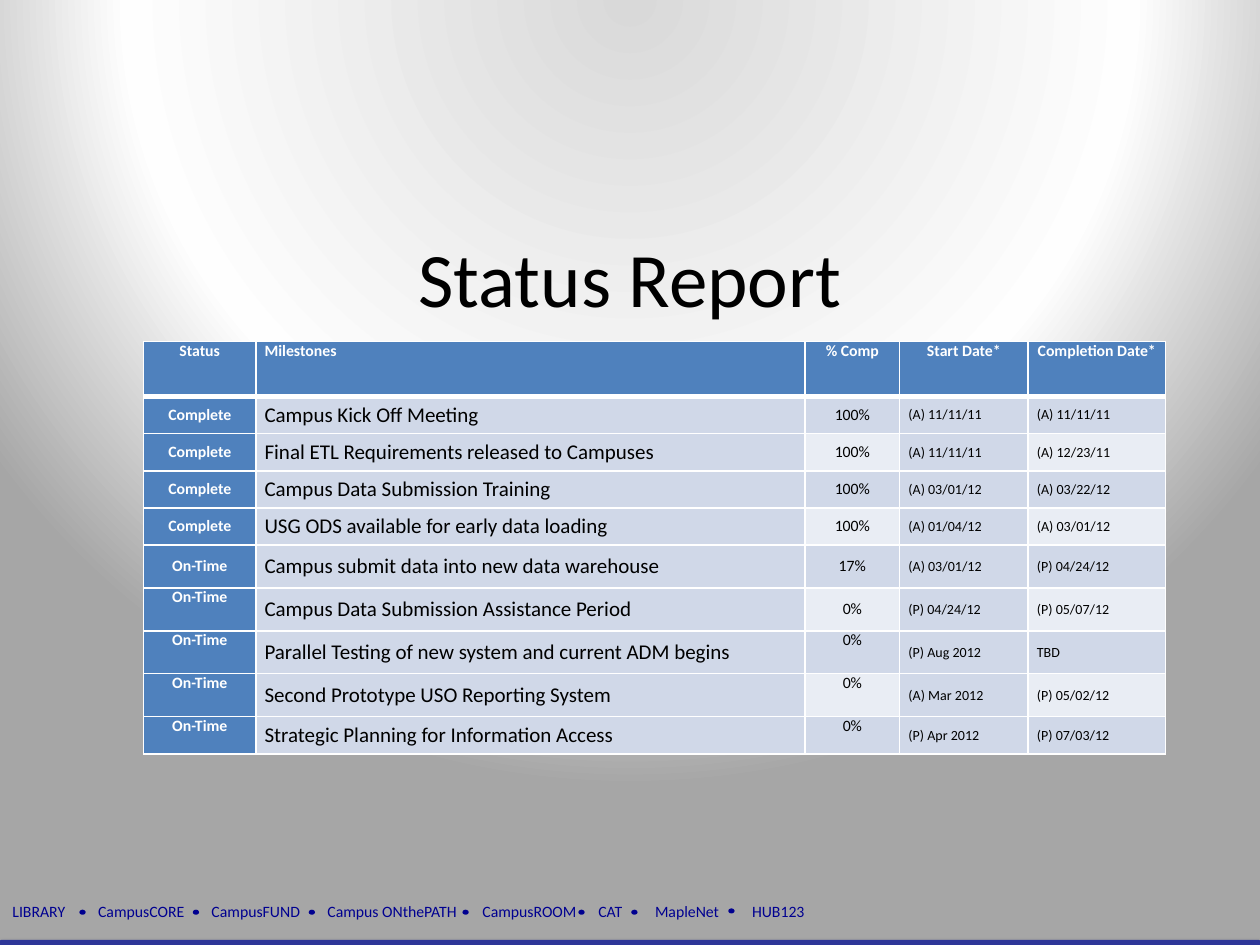
from lxml import etree
from pptx import Presentation
from pptx.dml.color import RGBColor
from pptx.enum.shapes import MSO_SHAPE as Shape
from pptx.enum.text import MSO_ANCHOR as Anchor, PP_ALIGN as Align
from pptx.oxml import parse_xml
from pptx.oxml.ns import nsdecls, qn
from pptx.util import Inches, Pt

FONT = "Calibri"
NAVY, WHITE, BLACK = "000090", "FFFFFF", "000000"
HEAD, BAND, PALE = "4F81BD", "D0D8E8", "E9EDF4"

COLUMNS = [0.89, 4.36, 0.75, 1.02, 1.09]  # inches
ALIGNS = [Align.CENTER, Align.LEFT, Align.CENTER, Align.LEFT, Align.LEFT]
SIZES = [9, 12, 9, 8, 8]
HEADINGS = ["Status", "Milestones", "% Comp", "Start Date*", "Completion Date*"]
MILESTONES = [
    ["Complete", "Campus Kick Off Meeting", "100%", "(A) 11/11/11", "(A) 11/11/11"],
    ["Complete", "Final ETL Requirements released to Campuses", "100%", "(A) 11/11/11", "(A) 12/23/11"],
    ["Complete", "Campus Data Submission Training", "100%", "(A) 03/01/12", "(A) 03/22/12"],
    ["Complete", "USG ODS available for early data loading", "100%", "(A) 01/04/12", "(A) 03/01/12"],
    ["On-Time", "Campus submit data into new data warehouse", "17%", "(A) 03/01/12", "(P) 04/24/12"],
    ["On-Time", "Campus Data Submission Assistance Period", "0%", "(P) 04/24/12", "(P) 05/07/12"],
    ["On-Time", "Parallel Testing of new system and current ADM begins", "0%", "(P) Aug 2012", "TBD"],
    ["On-Time", "Second Prototype USO Reporting System", "0%", "(A) Mar 2012", "(P) 05/02/12"],
    ["On-Time", "Strategic Planning for Information Access", "0%", "(P) Apr 2012", "(P) 07/03/12"],
]
ROW_HEIGHTS = [31.5] + [21.25] * 4 + [24.5] * 4 + [21.25]  # points
FIRST_TOP_ROW = {0: 6, 2: 7}  # column: first row whose text sits at the top

SERVICES = ["LIBRARY", "CampusCORE", "CampusFUND", "Campus ONthePATH",
            "CampusROOM", "CAT", "MapleNet", "HUB123"]
SERVICE_TABS = [0.68, 1.58, 2.5, 3.73, 4.65, 5.1, 5.87]
DOTS = [0.63, 1.53, 2.45, 3.67, 4.59, 5.01, 5.78]


def color(value):
    return RGBColor.from_string(value)


def style(para, size, tint, bold=False, align=Align.LEFT):
    para.alignment = align
    font = para.font
    font.name, font.size, font.bold = FONT, Pt(size), bold
    font.color.rgb = color(tint)


def set_background(page):
    page.background.fill.solid()
    holder = page.element.find(".//" + qn("p:bgPr"))
    stops = "".join(
        f'<a:gs pos="{share * 1000}"><a:srgbClr val="{tint}"/></a:gs>'
        for share, tint in [(0, "D9D9D9"), (64, "FEFEFE"), (100, "A6A6A6")])
    holder.replace(holder[0], parse_xml(
        f'<a:gradFill {nsdecls("a")} rotWithShape="1"><a:gsLst>{stops}</a:gsLst>'
        '<a:path path="circle"><a:fillToRect l="50000" t="-80000" r="50000" b="180000"/>'
        '</a:path></a:gradFill>'))


def add_solid(page, kind, left, top, width, height, tint):
    shape = page.shapes.add_shape(kind, *map(Inches, (left, top, width, height)))
    shape.shadow.inherit = False
    shape.fill.solid()
    shape.fill.fore_color.rgb = color(tint)
    shape.line.fill.background()
    return shape


def add_bottom_bar(page):
    bar = add_solid(page, Shape.ROUNDED_RECTANGLE, 0, 7.46, 10, 0.05, "2E3698")
    effects = bar.element.spPr.find(qn("a:effectLst"))
    effects.append(parse_xml(
        f'<a:outerShdw {nsdecls("a")} blurRad="{Pt(3.1)}" dist="{Pt(1.8)}" dir="5400000" '
        'rotWithShape="0"><a:srgbClr val="000000"><a:alpha val="35000"/></a:srgbClr>'
        '</a:outerShdw>'))


def add_services(page):
    box = page.shapes.add_textbox(*map(Inches, (0, 7.11, 7.81, 0.25)))
    box.text_frame.word_wrap = True
    para = box.text_frame.paragraphs[0]
    para.text = "\t".join(SERVICES)
    tabs = etree.SubElement(para._p.get_or_add_pPr(), qn("a:tabLst"))
    for stop in SERVICE_TABS:
        etree.SubElement(tabs, qn("a:tab"), pos=str(Inches(stop)), algn="l")
    style(para, 9, NAVY)
    # Dots between the service names
    for left in DOTS:
        top = 7.21 if left == DOTS[-1] else 7.22
        add_solid(page, Shape.OVAL, left, top, 0.05, 0.04, NAVY)


def set_borders(cell, row):
    widths = {"L": 1, "R": 1, "T": 3 if row == 1 else 1, "B": 3 if row == 0 else 1}
    props = cell._tc.get_or_add_tcPr()
    for place, (side, width) in enumerate(widths.items()):
        props.insert(place, parse_xml(
            f'<a:ln{side} {nsdecls("a")} w="{Pt(width)}"><a:solidFill>'
            f'<a:srgbClr val="{WHITE}"/></a:solidFill></a:ln{side}>'))


def fill_cell(cell, text, row, column):
    is_head = row == 0
    is_label = is_head or column == 0
    is_top = is_head or row >= FIRST_TOP_ROW.get(column, len(ROW_HEIGHTS))
    cell.margin_left = cell.margin_right = Inches(0.07)
    cell.margin_top = cell.margin_bottom = 0
    cell.vertical_anchor = Anchor.TOP if is_top else Anchor.MIDDLE
    is_pale = row % 2 == 0 and column in (2, 4)
    cell.fill.solid()
    cell.fill.fore_color.rgb = color(HEAD if is_label else PALE if is_pale else BAND)
    set_borders(cell, row)
    cell.text = text
    align = Align.CENTER if is_head and column != 1 else ALIGNS[column]
    style(cell.text_frame.paragraphs[0], 9 if is_head else SIZES[column],
          WHITE if is_label else BLACK, is_label, align)


def add_milestones(page):
    rows = [HEADINGS] + MILESTONES
    table = page.shapes.add_table(
        len(rows), len(COLUMNS), Inches(1.14), Inches(2.71),
        Inches(sum(COLUMNS)), Pt(sum(ROW_HEIGHTS))).table
    for column, width in zip(table.columns, COLUMNS):
        column.width = Inches(width)
    for row, height in zip(table.rows, ROW_HEIGHTS):
        row.height = Pt(height)
    for row, texts in enumerate(rows):
        for column, text in enumerate(texts):
            fill_cell(table.cell(row, column), text, row, column)


def set_title(page, text):
    title = page.shapes.title
    title.left, title.top, title.width, title.height = map(Inches, (0.75, 1.78, 8.5, 1.61))
    title.text_frame.text = text
    title.text_frame.vertical_anchor = Anchor.TOP
    style(title.text_frame.paragraphs[0], 44, BLACK, align=Align.CENTER)
    page.shapes._spTree.append(title.element)  # in front of the table


def main():
    deck = Presentation()
    deck.slide_width, deck.slide_height = Inches(10), Inches(7.5)
    page = deck.slides.add_slide(deck.slide_layouts[5])
    set_background(page)
    add_bottom_bar(page)
    add_services(page)
    add_milestones(page)
    set_title(page, "Status Report")
    deck.save("out.pptx")


if __name__ == "__main__":
    main()
